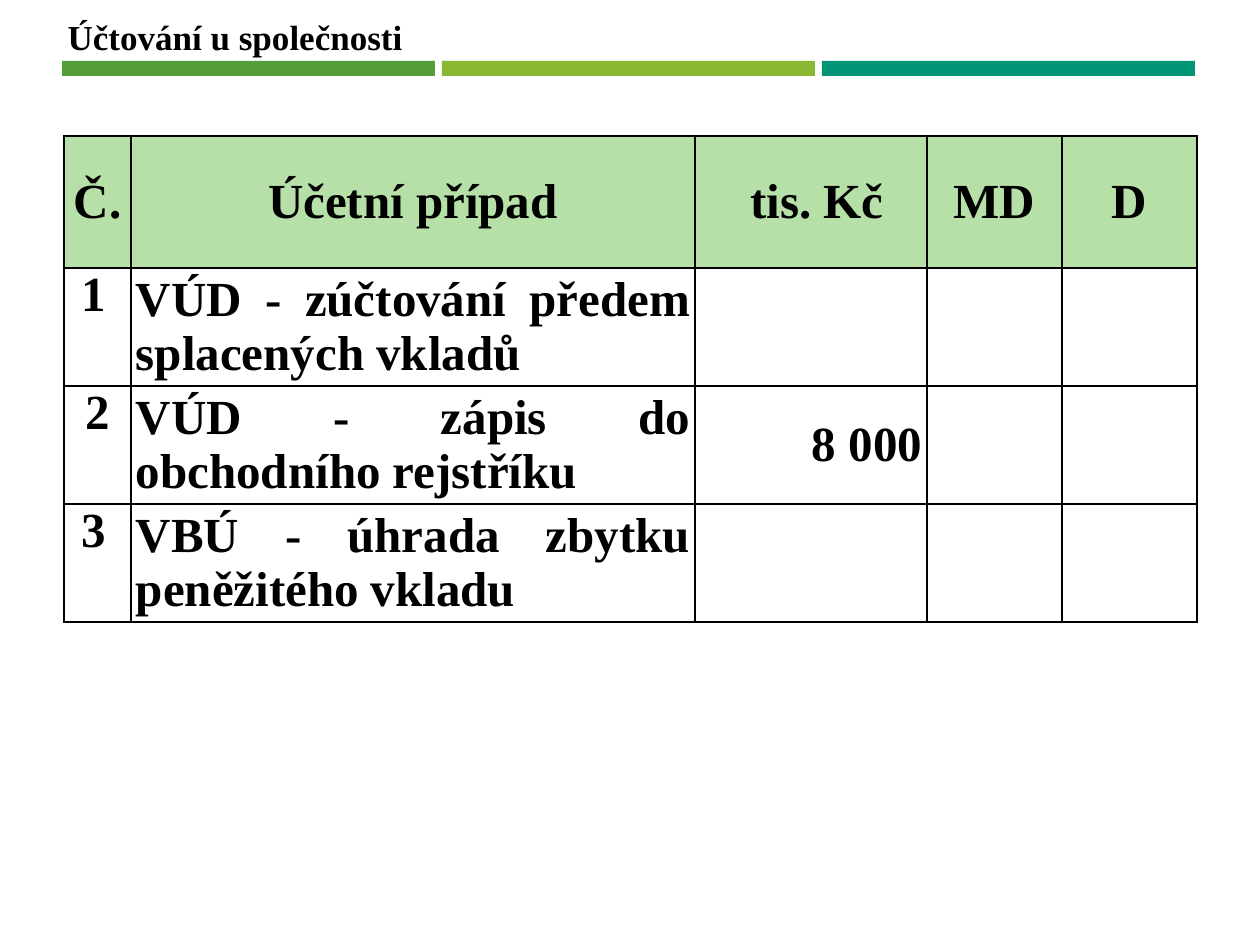
from lxml import etree
from pptx import Presentation, util as u
from pptx.dml.color import RGBColor
from pptx.enum import shapes, text
from pptx.oxml.ns import qn

PX = 914400 // 126
FONT = "Times New Roman"
HUES = {"ink": "000000", "head": "B7E0A8", "green": "549E39",
        "lime": "8AB833", "teal": "029676"}
AL = text.PP_ALIGN
MID, TOP = text.MSO_ANCHOR.MIDDLE, text.MSO_ANCHOR.TOP

COLS = [67, 564, 232, 135, 135]
ROWS = [132, 118, 118, 118]
HEAD = ["Č.", "Účetní případ", " tis. Kč", "MD", "D"]
# Number, its alignment, case, amount
CASES = [
    (" 1", AL.LEFT, "VÚD - zúčtování předem splacených vkladů", ""),
    ("2", AL.CENTER, "VÚD - zápis do obchodního rejstříku", "8 000"),
    (" 3", AL.LEFT, "VBÚ - úhrada zbytku peněžitého vkladu ", ""),
]


def px(*nums):
    return [u.Emu(n * PX) for n in nums]


def hue(name):
    return RGBColor.from_string(HUES[name])


def write(frame, words, size, align):
    para = frame.paragraphs[0]
    para.alignment = align
    run = para.add_run()
    run.text = words
    font = run.font
    font.name, font.size, font.bold = FONT, u.Pt(size), True
    font.color.rgb = hue("ink")


def title(slide, x, y, w, h):
    box = slide.shapes.title
    box.left, box.top, box.width, box.height = px(x, y, w, h)
    frame = box.text_frame
    frame.word_wrap = False
    frame.auto_size = text.MSO_AUTO_SIZE.NONE
    frame.vertical_anchor = TOP
    write(frame, "Účtování u společnosti", 20, AL.LEFT)


def stripe(slide, x, y, w, h, gap=7):
    names = ["green", "lime", "teal"]
    wide = (w - gap * (len(names) - 1)) // len(names)
    for i, name in enumerate(names):
        bar = slide.shapes.add_shape(shapes.MSO_SHAPE.RECTANGLE,
                                     *px(x + i * (wide + gap), y, wide, h))
        bar.shadow.inherit = False
        bar.fill.solid()
        bar.fill.fore_color.rgb = hue(name)
        bar.line.fill.background()


def edge(cell):
    props = cell._tc.get_or_add_tcPr()
    for side in ("lnL", "lnR", "lnT", "lnB"):
        line = etree.SubElement(props, qn("a:" + side), w=str(u.Pt(1)))
        fill = etree.SubElement(line, qn("a:solidFill"))
        etree.SubElement(fill, qn("a:srgbClr"), val=HUES["ink"])


def fill_cell(cell, words, align, anchor=MID, tint=None):
    edge(cell)
    cell.margin_left, cell.margin_right, cell.margin_top, cell.margin_bottom = px(5, 5, 0, 0)
    cell.vertical_anchor = anchor
    if tint:
        cell.fill.solid()
        cell.fill.fore_color.rgb = hue(tint)
    else:
        cell.fill.background()
    if words:
        write(cell.text_frame, words, 28, align)


def ledger(slide, x, y):
    grid = slide.shapes.add_table(len(ROWS), len(COLS),
                                  *px(x, y, sum(COLS), sum(ROWS))).table
    grid.first_row = grid.horz_banding = False
    for col, wide in zip(grid.columns, px(*COLS)):
        col.width = wide
    for row, high in zip(grid.rows, px(*ROWS)):
        row.height = high
    # Header row
    for c, words in enumerate(HEAD):
        fill_cell(grid.cell(0, c), words, AL.CENTER, tint="head")
    # Accounting cases
    for r, (num, side, case, sum_) in enumerate(CASES, 1):
        fill_cell(grid.cell(r, 0), num, side, TOP)
        fill_cell(grid.cell(r, 1), case, AL.JUSTIFY)
        for c, words in enumerate([sum_, "", ""], 2):
            fill_cell(grid.cell(r, c), words, AL.RIGHT)


def main():
    deck = Presentation()
    deck.slide_width, deck.slide_height = px(1260, 945)
    slide = deck.slides.add_slide(deck.slide_layouts[5])
    stripe(slide, 62, 61, 1135, 15)
    title(slide, 55, 9, 363, 55)
    ledger(slide, 64, 136)
    deck.save("out.pptx")


if __name__ == "__main__":
    main()
